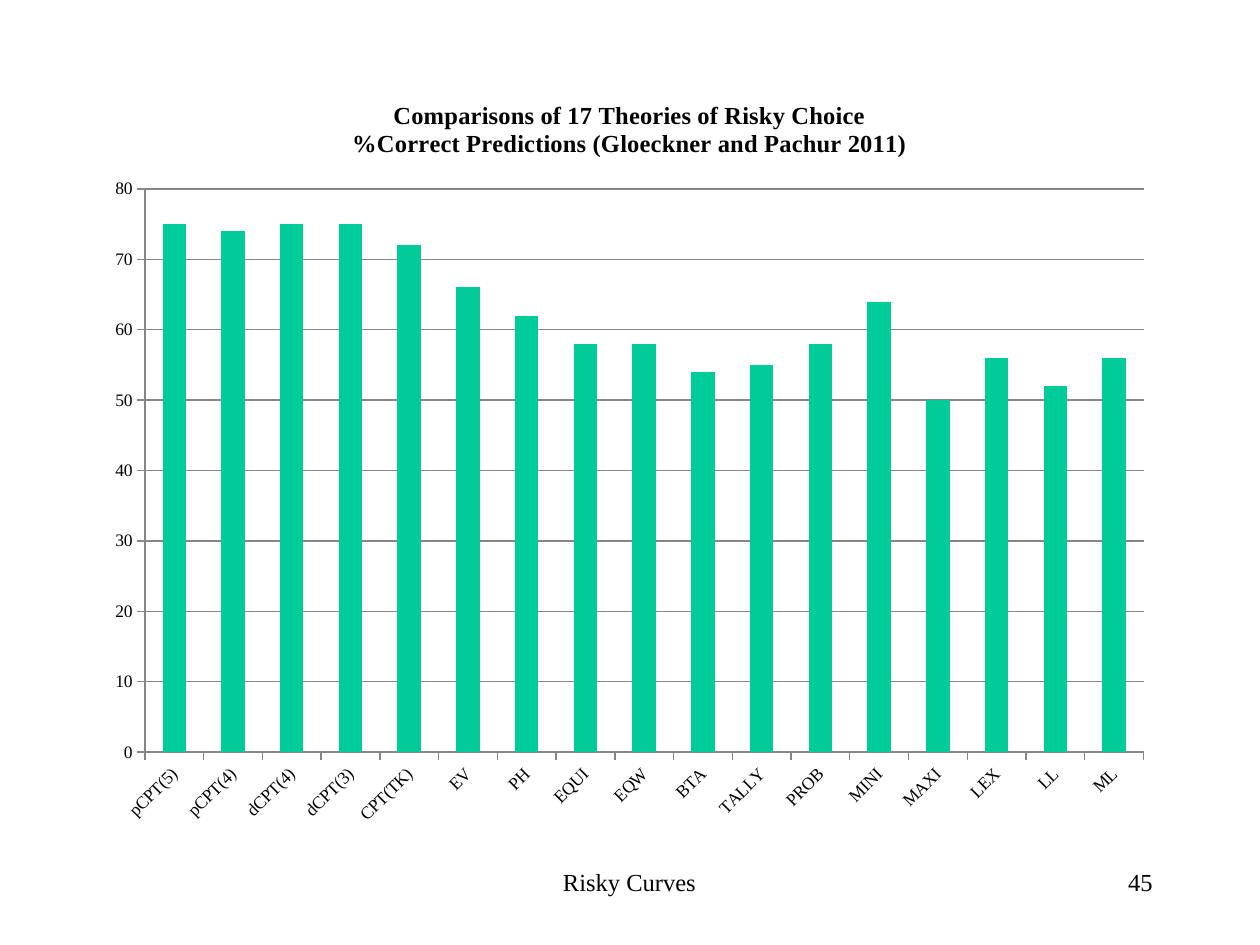
"""Build a slide with a column chart comparing 17 theories of risky choice."""
from pptx import Presentation
from pptx.chart.data import CategoryChartData
from pptx.dml.color import RGBColor
from pptx.enum.chart import XL_CHART_TYPE as ChartType, XL_TICK_MARK as TickMark
from pptx.enum.text import PP_ALIGN as Align
from pptx.oxml.ns import qn
from pptx.util import Pt

PX = 914400 / 126
FONT = "Times New Roman"
ACCURACY = {
    "pCPT(5)": 75, "pCPT(4)": 74, "dCPT(4)": 75, "dCPT(3)": 75, "CPT(TK)": 72,
    "EV": 66, "PH": 62, "EQUI": 58, "EQW": 58, "BTA": 54, "TALLY": 55,
    "PROB": 58, "MINI": 64, "MAXI": 50, "LEX": 56, "LL": 52, "ML": 56,
}


def px(*lengths):
    return [round(length * PX) for length in lengths]


def style(font, size, color="000000", bold=False):
    font.name = FONT
    font.size = Pt(size)
    font.bold = bold
    font.color.rgb = RGBColor.from_string(color)


presentation = Presentation()
presentation.slide_width, presentation.slide_height = px(1260, 945)
slide = presentation.slides.add_slide(presentation.slide_layouts[6])

for text, left, width, alignment in [
    ("Risky Curves", 430, 399, Align.CENTER),
    ("45", 903, 262, Align.RIGHT),
]:
    text_frame = slide.shapes.add_textbox(*px(left, 861, width, 63)).text_frame
    text_frame.word_wrap = True
    text_frame.text = text
    paragraph = text_frame.paragraphs[0]
    paragraph.alignment = alignment
    style(paragraph.runs[0].font, 14)

chart_data = CategoryChartData()
chart_data.categories = list(ACCURACY)
chart_data.add_series("Series 1", list(ACCURACY.values()))
chart = slide.shapes.add_chart(
    ChartType.COLUMN_CLUSTERED, *px(94, 74, 1071, 766), chart_data
).chart
style(chart.font, 10)
chart.has_legend = False
chart.has_title = True
title_frame = chart.chart_title.text_frame
title_frame.text = (
    "Comparisons of 17 Theories of Risky Choice\n"
    "%Correct Predictions (Gloeckner and Pachur 2011)"
)
for paragraph in title_frame.paragraphs:
    style(paragraph.runs[0].font, 14, bold=True)
chart.chart_title.include_in_layout = False

plot = chart.plots[0]
plot.vary_by_categories = False
plot.gap_width = 150
fill = plot.series[0].format.fill
fill.solid()
fill.fore_color.rgb = RGBColor.from_string("00CC99")

value_axis, category_axis = chart.value_axis, chart.category_axis
value_axis.has_major_gridlines = True
for axis in (value_axis, category_axis):
    axis.major_tick_mark = TickMark.OUTSIDE
    axis.minor_tick_mark = TickMark.NONE
    style(axis.tick_labels.font, 10)
for line in (
    value_axis.format.line,
    category_axis.format.line,
    value_axis.major_gridlines.format.line,
):
    line.color.rgb = RGBColor.from_string("868686")
    line.width = Pt(0.75)
category_axis._element.find(qn("c:txPr")).find(qn("a:bodyPr")).set("rot", "-2700000")

presentation.save("out.pptx")
